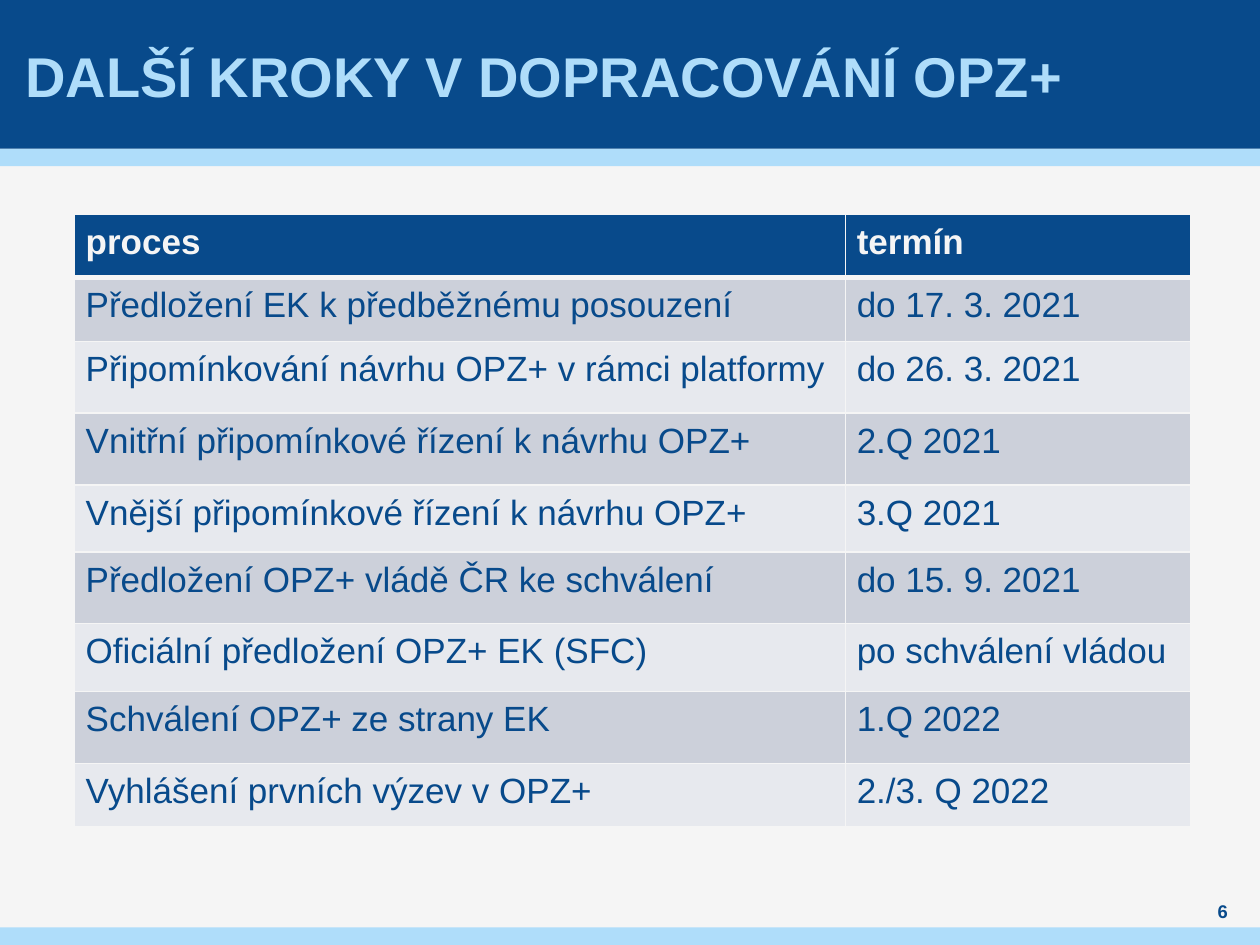
from lxml.etree import SubElement as Sub
from pptx import Presentation
from pptx.dml.color import RGBColor
from pptx.enum.shapes import MSO_SHAPE as Shape
from pptx.enum.text import MSO_ANCHOR as Anchor, PP_ALIGN as Align
from pptx.oxml.ns import qn
from pptx.util import Inches, Pt

NAVY = RGBColor(0x08, 0x4A, 0x8B)
SKY = RGBColor(0xAF, 0xDD, 0xFA)
PAPER = RGBColor(0xF5, 0xF5, 0xF5)
BANDS = RGBColor(0xCC, 0xD0, 0xDA), RGBColor(0xE7, 0xE9, 0xEE)

COLS = 61.2, 27.4
ROWS = 5, 5.1, 5.7, 5.7, 5.3, 5.7, 5.4, 5.7, 5
STEPS = [
    ("proces", "termín"),
    ("Předložení EK k předběžnému posouzení", "do 17. 3. 2021"),
    ("Připomínkování návrhu OPZ+ v rámci platformy", "do 26. 3. 2021"),
    ("Vnitřní připomínkové řízení k návrhu OPZ+", "2.Q 2021"),
    ("Vnější připomínkové řízení k návrhu OPZ+", "3.Q 2021"),
    ("Předložení OPZ+ vládě ČR ke schválení", "do 15. 9. 2021"),
    ("Oficiální předložení OPZ+ EK (SFC)", "po schválení vládou"),
    ("Schválení OPZ+ ze strany EK", "1.Q 2022"),
    ("Vyhlášení prvních výzev v OPZ+", "2./3. Q 2022"),
]


class Deck:
    face = "Arial"
    wide, high = 100, 75

    def __init__(self):
        self.show = Presentation()
        self.show.slide_width = self.unit(self.wide)
        self.show.slide_height = self.unit(self.high)
        self.slide = self.show.slides.add_slide(self.show.slide_layouts[6])
        back = self.slide.background.fill
        back.solid()
        back.fore_color.rgb = PAPER

    def unit(self, count):
        return Inches(count / 10)

    def place(self, *box):
        return [self.unit(n) for n in box]

    def style(self, para, size, color, bold):
        font = para.font
        font.name, font.size, font.bold = self.face, Pt(size), bold
        font.color.rgb = color

    def band(self, top, high, color):
        area = self.place(0, top, self.wide, high)
        bar = self.slide.shapes.add_shape(Shape.RECTANGLE, *area)
        bar.shadow.inherit = False
        bar.fill.solid()
        bar.fill.fore_color.rgb = color
        bar.line.fill.background()

    def text(self, box, words, size, color, align=Align.LEFT, side=0, foot=0):
        frame = self.slide.shapes.add_textbox(*self.place(*box)).text_frame
        frame.word_wrap = True
        frame.vertical_anchor = Anchor.MIDDLE
        frame.margin_left = frame.margin_right = self.unit(side)
        frame.margin_top, frame.margin_bottom = 0, self.unit(foot)
        para = frame.paragraphs[0]
        para.text, para.alignment = words, align
        self.style(para, size, color, True)

    def cell(self, cell, words, fill, color, head, edges):
        cell.margin_left = cell.margin_right = self.unit(0.9)
        cell.margin_top = cell.margin_bottom = self.unit(0.5)
        para = cell.text_frame.paragraphs[0]
        para.text = words
        para.line_spacing, para.space_after = 1.06, Pt(8)
        self.style(para, 20, color, head)
        props = cell._tc.get_or_add_tcPr()
        for side, width in edges.items():
            line = Sub(props, qn(f"a:ln{side}"), w=str(Pt(width)))
            paint = Sub(line, qn("a:solidFill"))
            Sub(paint, qn("a:srgbClr"), val=str(PAPER))
        cell.fill.solid()
        cell.fill.fore_color.rgb = fill

    def table(self, left, top, cols, rows, data):
        area = self.place(left, top, sum(cols), sum(rows))
        grid = self.slide.shapes.add_table(len(rows), len(cols), *area).table
        for col, width in zip(grid.columns, cols):
            col.width = self.unit(width)
        for i, (row, high) in enumerate(zip(grid.rows, rows)):
            row.height = self.unit(high)
            head = i == 0
            fill = NAVY if head else BANDS[(i - 1) % 2]
            color = PAPER if head else NAVY
            edges = {"L": 1, "R": 1, "T": 3 if i == 1 else 1, "B": 3 if head else 1}
            for cell, words in zip(row.cells, data[i]):
                self.cell(cell, words, fill, color, head, edges)

    def save(self):
        self.show.save("out.pptx")


def main():
    deck = Deck()
    deck.band(11.8, 1.4, SKY)
    deck.band(0, 11.8, NAVY)
    deck.band(73.6, 1.4, SKY)
    deck.text((1.6, 1.8, 96.9, 13.4), "DALŠÍ KROKY V DOPRACOVÁNÍ OPZ+", 32, SKY, side=0.4, foot=5.1)
    deck.text((94.5, 71.3, 5.1, 2), "6", 10.5, NAVY, Align.CENTER)
    deck.table(5.9, 17, COLS, ROWS, STEPS)
    deck.save()


if __name__ == "__main__":
    main()
